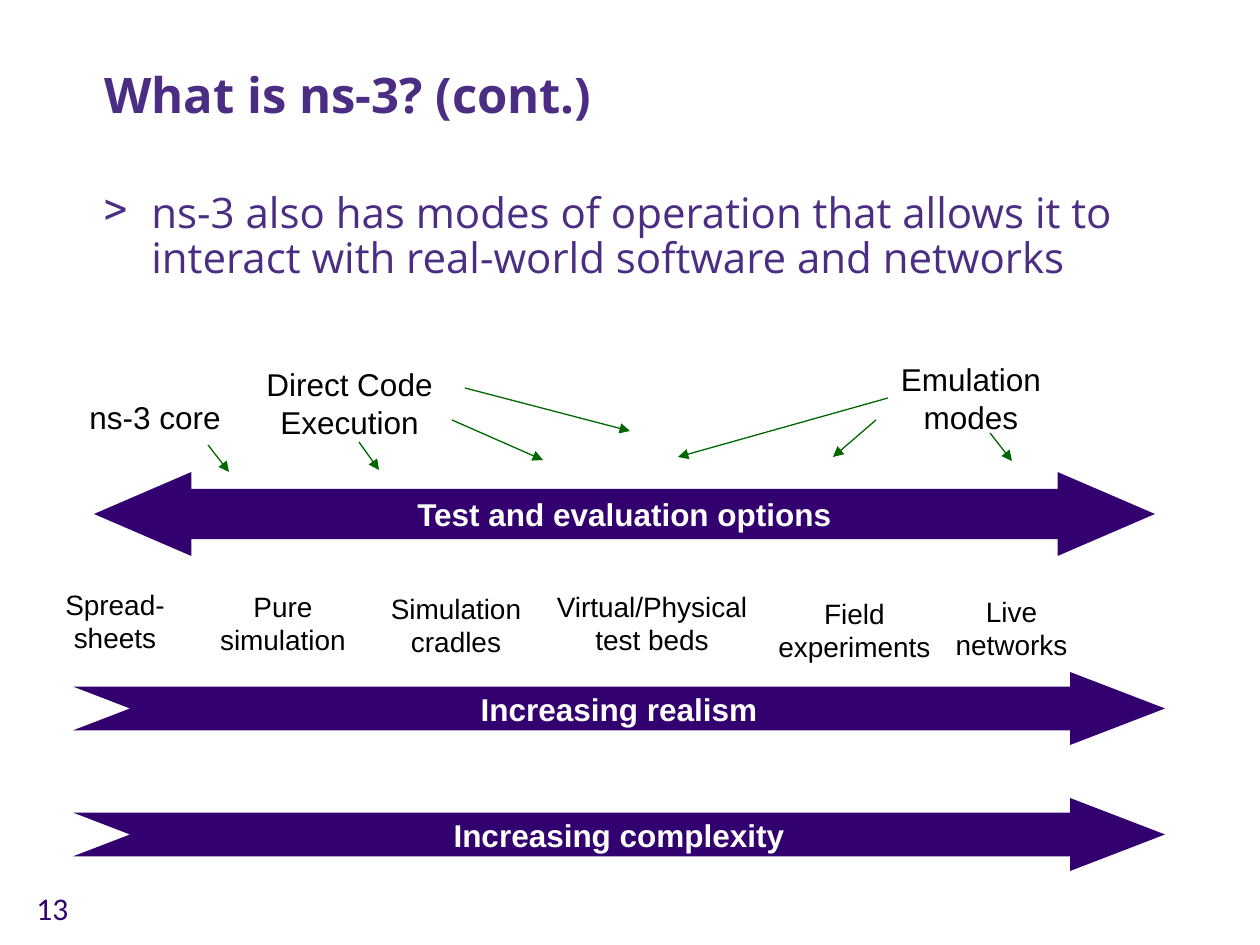
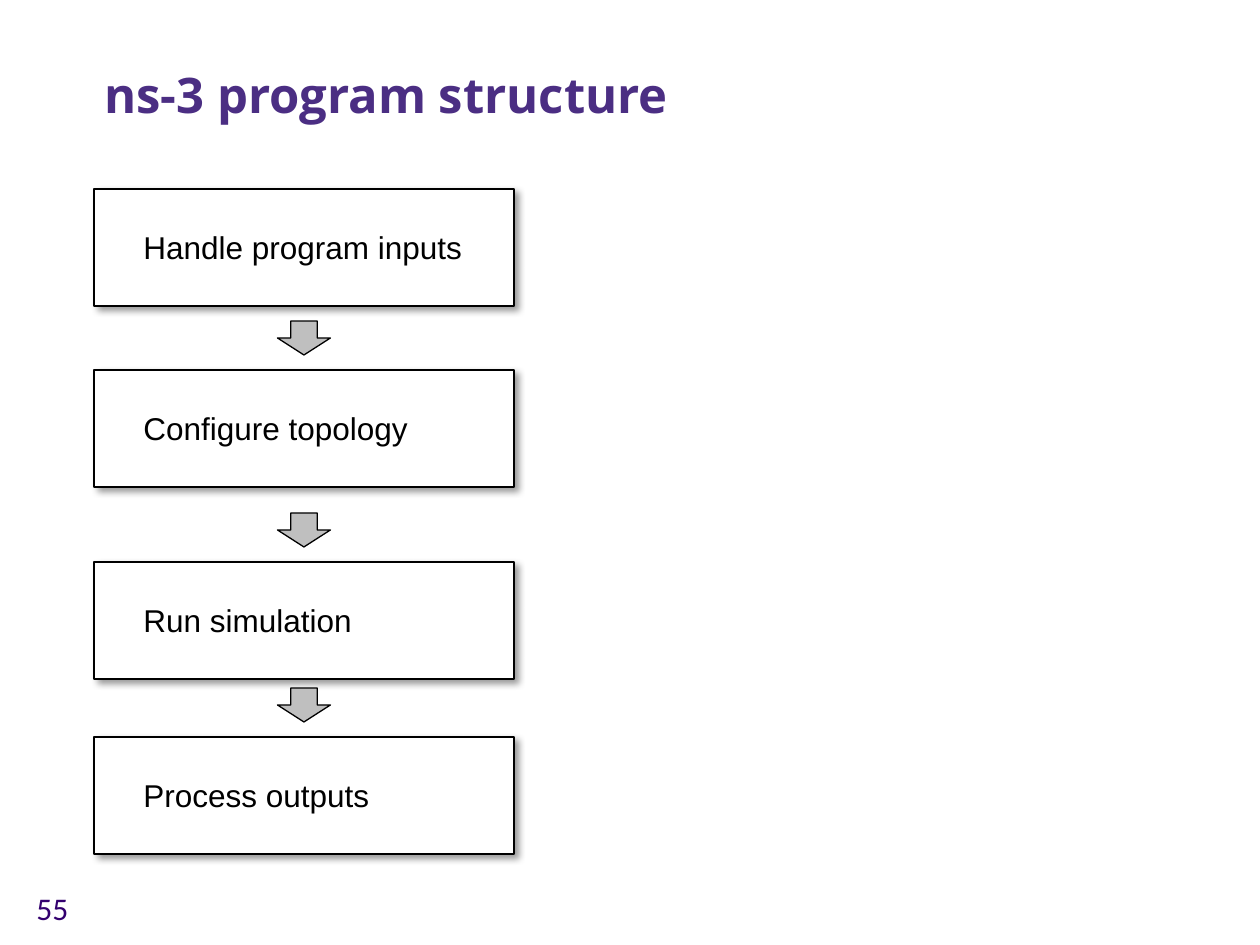
from lxml import etree
from pptx import Presentation
from pptx.dml.color import RGBColor
from pptx.enum.shapes import MSO_CONNECTOR, MSO_SHAPE
from pptx.enum.text import MSO_ANCHOR, MSO_AUTO_SIZE, PP_ALIGN
from pptx.oxml import parse_xml
from pptx.oxml.ns import qn
from pptx.util import Emu, Pt

LEFT, CENTER = PP_ALIGN.LEFT, PP_ALIGN.CENTER
TOP, MIDDLE, BOTTOM = MSO_ANCHOR.TOP, MSO_ANCHOR.MIDDLE, MSO_ANCHOR.BOTTOM
GROW = MSO_AUTO_SIZE.SHAPE_TO_FIT_TEXT
NOTCHED, DOUBLE = MSO_SHAPE.NOTCHED_RIGHT_ARROW, MSO_SHAPE.LEFT_RIGHT_ARROW
RECT, DOWN = MSO_SHAPE.RECTANGLE, MSO_SHAPE.DOWN_ARROW
STRAIGHT = MSO_CONNECTOR.STRAIGHT

PX_PER_INCH = 126
COLORS = {"heading": "4B2E83", "band": "33006F", "pointer": "006600",
          "step": "BFBFBF", "black": "000000", "white": "FFFFFF"}
HEADING_FONT, LABEL_FONT, NUMBER_FONT = "Open Sans", "Arial", "Calibri"

# Content: modes of operation (places are left, top, width, height in px)
MODES_TITLE, MODES_NUMBER = "What is ns-3? (cont.)", "13"
MODES_BULLET = ("ns-3 also has modes of operation that allows it to "
                "interact with real-world software and networks")
MODES = [
    (["ns-3 core"], (76, 392, 158, 50)),
    (["Direct Code", "Execution"], (253, 359, 193, 89)),
    (["Emulation", "modes"], (888, 354, 166, 89)),
]
POINTERS = [
    ((208, 445), (229, 472)),
    ((359, 442), (379, 470)),
    ((990, 433), (1012, 461)),
    ((888, 398), (678, 457)),
    ((876, 420), (833, 457)),
    ((452, 420), (543, 460)),
    ((465, 388), (630, 431)),
]
BANDS = [
    ("Test and evaluation options", DOUBLE, (94, 472, 1061, 84), (0.6, 1.16)),
    ("Increasing realism", NOTCHED, (73, 672, 1092, 73), (0.6, 1.3)),
    ("Increasing complexity", NOTCHED, (73, 798, 1092, 73), (0.6, 1.3)),
]
OPTION_HEIGHT = 81
OPTIONS = [  # lines, left, top, width
    (["Spread-", "sheets"], 52, 581, 126),
    (["Pure", "simulation"], 207, 583, 152),
    (["Simulation", "cradles"], 377, 585, 158),
    (["Virtual/Physical", "test beds"], 543, 583, 218),
    (["Field", "experiments"], 765, 590, 179),
    (["Live", "networks"], 942, 588, 139),
]

# Content: program structure
STAGES_TITLE, STAGES_NUMBER = "ns-3 program structure", "55"
STAGES = [  # label, top of stage, width of label
    ("Handle program inputs", 189, 346),
    ("Configure topology", 370, 292),
    ("Run simulation", 562, 236),
    ("Process outputs", 737, 253),
]
STAGE_LEFT, STAGE_WIDTH, STAGE_HEIGHT = 94, 420, 117
LABEL_INDENT, LABEL_DROP, LABEL_HEIGHT = 37, 33, 50
STEP_WIDTH, STEP_HEIGHT, STEP_RISE = 53, 34, 49


def px(length):
    return Emu(round(length * 914400 / PX_PER_INCH))


def rgb(name):
    return RGBColor.from_string(COLORS[name])


def write(frame, lines, size, color, font=LABEL_FONT, bold=False,
          align=LEFT, anchor=TOP, wrap=False, spacing=None):
    frame.word_wrap = wrap
    frame.vertical_anchor = anchor
    for index, line in enumerate(lines):
        paragraph = frame.paragraphs[0] if index == 0 else frame.add_paragraph()
        paragraph.text = line
        paragraph.alignment = align
        if spacing:
            paragraph.line_spacing = spacing
        paragraph.font.name = font
        paragraph.font.size = Pt(size)
        paragraph.font.bold = bold
        paragraph.font.color.rgb = rgb(color)


def add_text(slide, lines, place, size, color, grow=True, **style):
    frame = slide.shapes.add_textbox(*map(px, place)).text_frame
    write(frame, lines, size, color, **style)
    frame.auto_size = GROW if grow else MSO_AUTO_SIZE.NONE
    return frame


def add_block(slide, kind, place, fill, outline=None):
    block = slide.shapes.add_shape(kind, *map(px, place))
    block.shadow.inherit = False
    block.fill.solid()
    block.fill.fore_color.rgb = rgb(fill)
    if outline:
        block.line.color.rgb = rgb(outline)
        block.line.width = Pt(0.75)
    else:
        block.line.fill.background()
    return block


def add_pointer(slide, start, end):
    pointer = slide.shapes.add_connector(STRAIGHT, *map(px, start + end))
    pointer.line.color.rgb = rgb("pointer")
    pointer.line.width = Pt(0.75)
    etree.SubElement(pointer.line._get_or_add_ln(), qn("a:tailEnd"), type="triangle")
    etree.SubElement(pointer._element.spPr, qn("a:effectLst"))


def cast_shadow(block):
    effects = block._element.spPr.find(qn("a:effectLst"))
    effects.append(parse_xml(
        '<a:outerShdw xmlns:a="http://schemas.openxmlformats.org/drawingml/2006/main"'
        f' blurRad="{Pt(4)}" dist="{Pt(3)}" dir="2700000" algn="tl" rotWithShape="0">'
        f'<a:srgbClr val="{COLORS["black"]}"><a:alpha val="40000"/></a:srgbClr>'
        '</a:outerShdw>'))


def add_bullet(slide, text, place):
    frame = slide.shapes.add_textbox(*map(px, place)).text_frame
    properties = frame.paragraphs[0]._p.get_or_add_pPr()
    properties.set("marL", str(px(48)))
    properties.set("indent", str(-px(48)))
    etree.SubElement(properties, qn("a:buChar"), char=">")
    write(frame, [text], 24, "heading", font=HEADING_FONT, wrap=True, spacing=0.9)


def add_slide(deck, title, number):
    slide = deck.slides.add_slide(deck.slide_layouts[6])
    add_text(slide, [number], (24, 883, 67, 50), 18, "band",
             font=NUMBER_FONT, wrap=True)
    add_text(slide, [title], (92, 53, 1126, 77), 28, "heading", grow=False,
             font=HEADING_FONT, bold=True, anchor=BOTTOM, wrap=True, spacing=0.9)
    return slide


def build_modes(deck):
    slide = add_slide(deck, MODES_TITLE, MODES_NUMBER)
    add_bullet(slide, MODES_BULLET, (91, 186, 1129, 614))
    for lines, place in MODES:
        add_text(slide, lines, place, 18, "black", align=CENTER)
    for start, end in POINTERS:
        add_pointer(slide, start, end)
    for label, kind, place, adjustments in BANDS:
        band = add_block(slide, kind, place, "band")
        for index, value in enumerate(adjustments):
            band.adjustments[index] = value
        write(band.text_frame, [label], 18, "white", bold=True,
              align=CENTER, anchor=MIDDLE)
    for lines, left, top, width in OPTIONS:
        add_text(slide, lines, (left, top, width, OPTION_HEIGHT), 16, "black",
                 align=CENTER)


def build_stages(deck):
    slide = add_slide(deck, STAGES_TITLE, STAGES_NUMBER)
    step_left = STAGE_LEFT + (STAGE_WIDTH - STEP_WIDTH) / 2
    for index, (label, top, label_width) in enumerate(STAGES):
        stage = add_block(slide, RECT, (STAGE_LEFT, top, STAGE_WIDTH, STAGE_HEIGHT),
                          "white", "black")
        cast_shadow(stage)
        add_text(slide, [label], (STAGE_LEFT + LABEL_INDENT, top + LABEL_DROP,
                                  label_width, LABEL_HEIGHT), 18, "black")
        if index > 0:
            add_block(slide, DOWN, (step_left, top - STEP_RISE, STEP_WIDTH, STEP_HEIGHT),
                      "step", "black")


def main():
    deck = Presentation()
    deck.slide_width, deck.slide_height = px(1260), px(945)
    build_modes(deck)
    build_stages(deck)
    deck.save("out.pptx")


if __name__ == "__main__":
    main()
